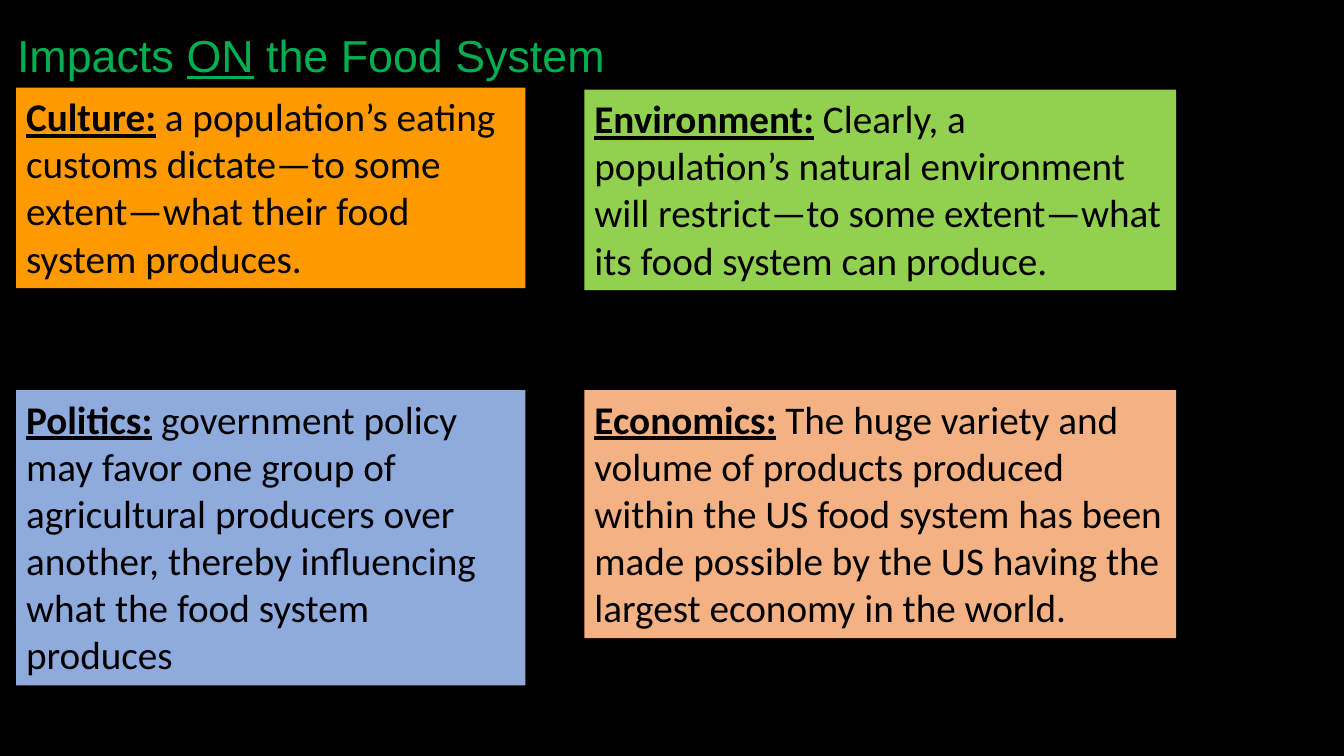
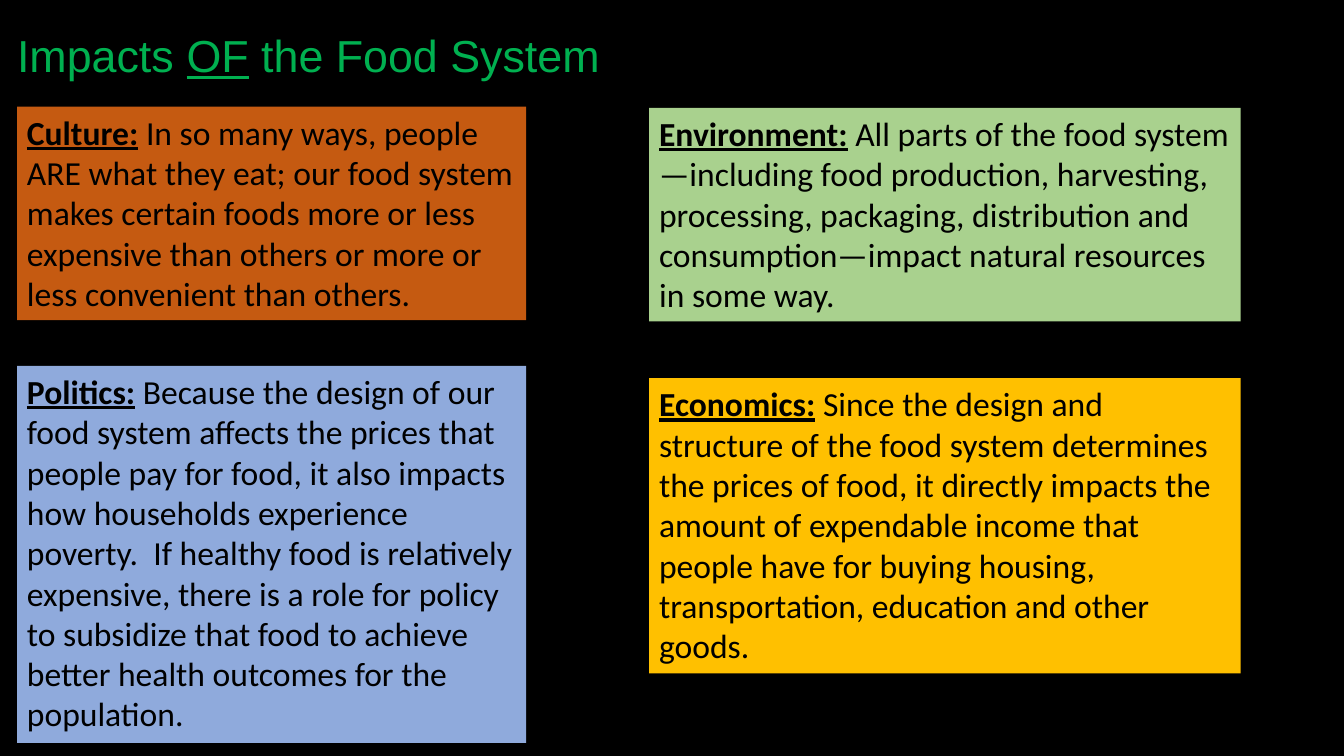
from dataclasses import dataclass

from pptx import Presentation
from pptx.dml.color import RGBColor
from pptx.enum.shapes import MSO_SHAPE
from pptx.enum.text import MSO_ANCHOR, MSO_AUTO_SIZE, PP_ALIGN
from pptx.slide import Slide
from pptx.text.text import TextFrame
from pptx.util import Cm, Pt

COLORS = {
    "background": "000000",
    "title": "00B050",
    "body": "000000",
    "orange": "FF9900",
    "blue": "8FAADC",
    "lime": "92D050",
    "peach": "F4B183",
    "rust": "C55A11",
    "sage": "A9D18E",
    "gold": "FFC000",
}

# Lengths in centimetres
TITLE_LEFT, TITLE_TOP, TITLE_HEIGHT = 0.18, 0.58, 1.63
COLUMN_WIDTHS = (12.83, 14.91)


@dataclass(frozen=True)
class Impact:
    topic: str
    statement: str
    color: str
    column: int
    top: float
    height: float


@dataclass(frozen=True)
class ImpactSlide:
    direction: str
    title_width: float
    column_lefts: tuple[float, float]
    text_size: int
    impacts: tuple[Impact, ...]


IMPACT_SLIDES = (
    ImpactSlide("ON", 15.75, (0.41, 14.73), 28, (
        Impact("Culture:", " a population’s eating customs dictate—to some extent—what "
               "their food system produces.", "orange", 0, 2.21, 5.05),
        Impact("Politics:", " government policy may favor one group of agricultural "
               "producers over another, thereby influencing what the food system "
               "produces", "blue", 0, 9.83, 7.44),
        Impact("Environment:", " Clearly, a population’s natural environment will "
               "restrict—to some extent—what its food system can produce.",
               "lime", 1, 2.26, 5.05),
        Impact("Economics:", " The huge variety and volume of products produced within "
               "the US food system has been made possible by the US having the "
               "largest economy in the world.", "peach", 1, 9.83, 6.25),
    )),
    ImpactSlide("OF", 15.32, (0.43, 16.36), 24, (
        Impact("Culture:", " In so many ways, people ARE what they eat; our food system "
               "makes certain foods more or less expensive than others or more or "
               "less convenient than others.", "rust", 0, 2.69, 5.38),
        Impact("Politics:", " Because the design of our food system affects the prices "
               "that people pay for food, it also impacts how households experience "
               "poverty.  If healthy food is relatively expensive, there is a role "
               "for policy to subsidize that food to achieve better health outcomes "
               "for the population.", "blue", 0, 9.22, 9.5),
        Impact("Environment:", " All parts of the food system—including food production, "
               "harvesting, processing, packaging, distribution and "
               "consumption—impact natural resources in some way.",
               "sage", 1, 2.72, 5.38),
        Impact("Economics:", " Since the design and structure of the food system "
               "determines the prices of food, it directly impacts the amount of "
               "expendable income that people have for buying housing, "
               "transportation, education and other goods.", "gold", 1, 9.53, 7.44),
    )),
)


def rgb(name: str) -> RGBColor:
    return RGBColor.from_string(COLORS[name])


def add_text(frame: TextFrame, text: str, *, size: int, font: str, color: str,
             bold: bool = False, underline: bool = False) -> None:
    """Append one formatted run to the frame's first paragraph."""
    run = frame.paragraphs[0].add_run()
    run.text = text
    run.font.size = Pt(size)
    run.font.name = font
    run.font.color.rgb = rgb(color)
    run.font.bold = bold
    run.font.underline = underline


def add_title(slide: Slide, direction: str, width: float) -> None:
    title = slide.shapes.add_textbox(
        Cm(TITLE_LEFT), Cm(TITLE_TOP), Cm(width), Cm(TITLE_HEIGHT)).text_frame
    title.word_wrap = False
    title.auto_size = MSO_AUTO_SIZE.SHAPE_TO_FIT_TEXT
    for part in ("Impacts ", direction, " the Food System"):
        add_text(title, part, size=32, font="Arial", color="title",
                 underline=part == direction)


def add_impact(slide: Slide, impact: Impact, left: float, size: int) -> None:
    panel = slide.shapes.add_shape(
        MSO_SHAPE.RECTANGLE, Cm(left), Cm(impact.top),
        Cm(COLUMN_WIDTHS[impact.column]), Cm(impact.height))
    panel.shadow.inherit = False
    panel.fill.solid()
    panel.fill.fore_color.rgb = rgb(impact.color)
    panel.line.fill.background()
    frame = panel.text_frame
    frame.word_wrap = True
    frame.auto_size = MSO_AUTO_SIZE.SHAPE_TO_FIT_TEXT
    frame.vertical_anchor = MSO_ANCHOR.TOP
    frame.paragraphs[0].alignment = PP_ALIGN.LEFT
    add_text(frame, impact.topic, size=size, font="Calibri", color="body",
             bold=True, underline=True)
    add_text(frame, impact.statement, size=size, font="Calibri", color="body")


def main() -> None:
    deck = Presentation()
    deck.slide_width, deck.slide_height = Cm(33.87), Cm(19.05)

    # Shared black background
    background = deck.slide_master.background.fill
    background.solid()
    background.fore_color.rgb = rgb("background")

    # One slide per direction of impact
    for content in IMPACT_SLIDES:
        slide = deck.slides.add_slide(deck.slide_layouts[6])
        add_title(slide, content.direction, content.title_width)
        for impact in content.impacts:
            add_impact(slide, impact, content.column_lefts[impact.column],
                       content.text_size)

    deck.save("out.pptx")


if __name__ == "__main__":
    main()
